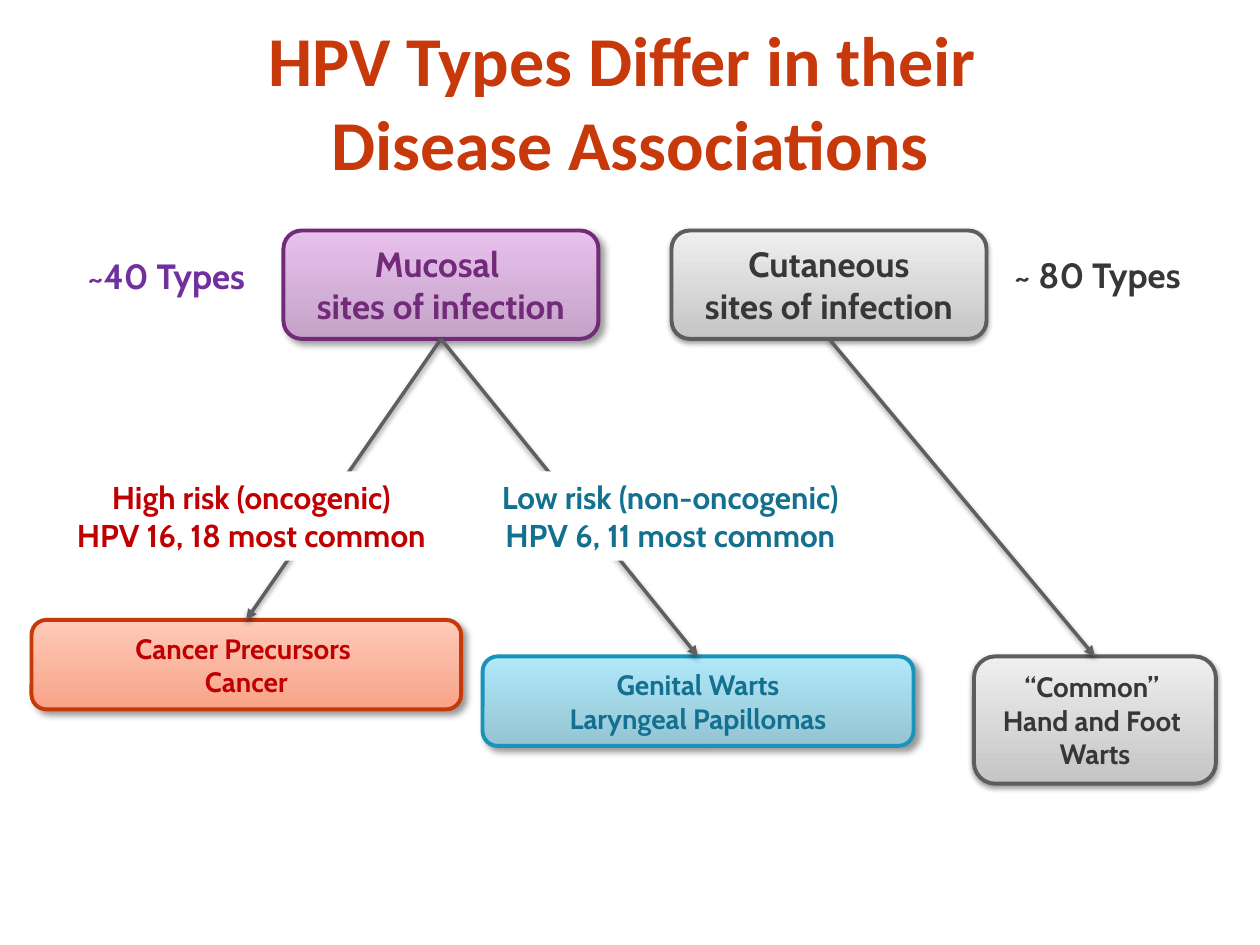
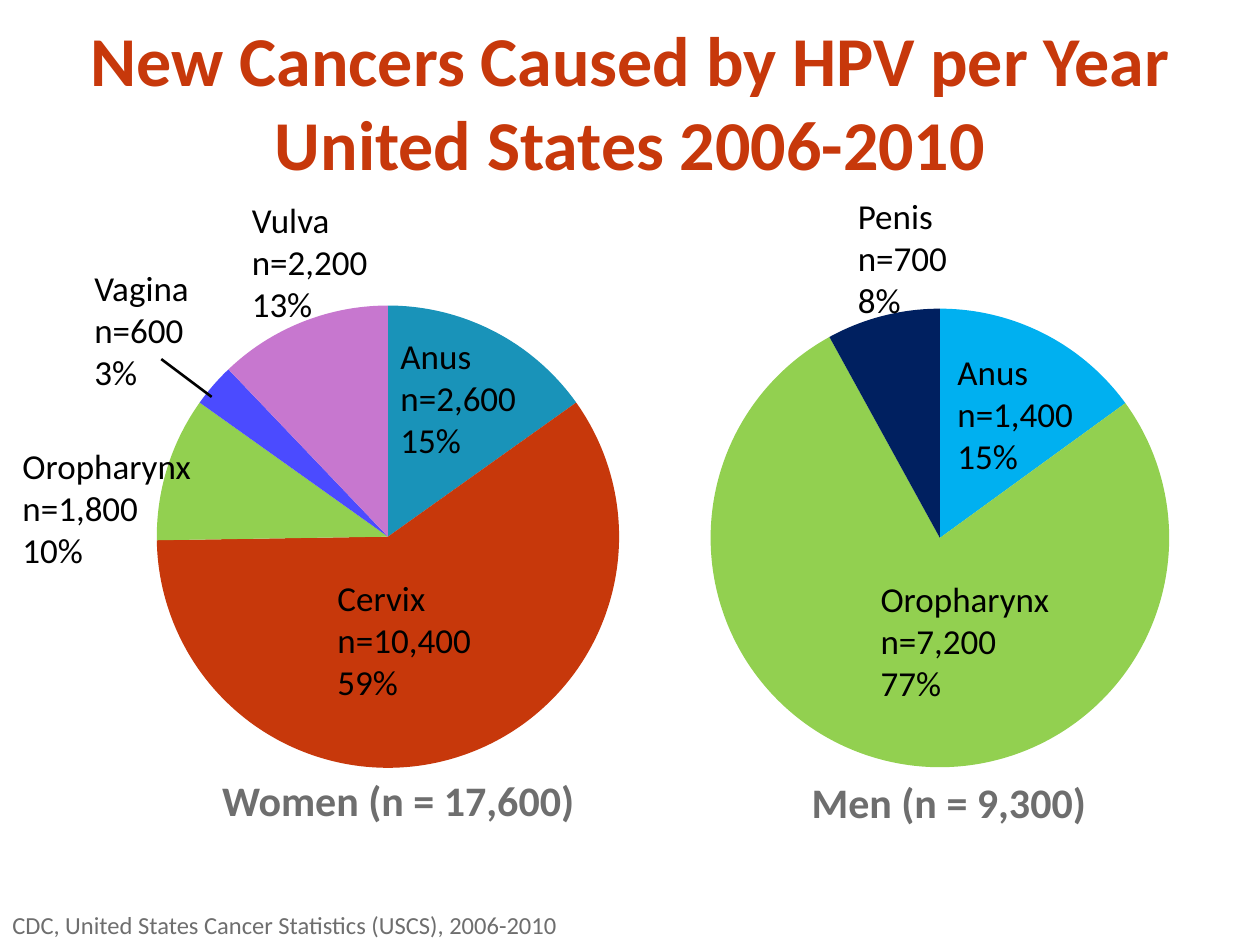
from lxml.etree import SubElement
from pptx import Presentation
from pptx.chart.data import CategoryChartData
from pptx.dml.color import RGBColor
from pptx.enum.chart import XL_CHART_TYPE
from pptx.enum.shapes import MSO_CONNECTOR, MSO_SHAPE
from pptx.enum.text import MSO_ANCHOR, MSO_AUTO_SIZE, PP_ALIGN
from pptx.oxml import parse_xml
from pptx.oxml.ns import nsdecls, qn
from pptx.util import Inches, Pt

COLORS = {
    "title": "C7380B", "white": "FFFFFF", "black": "000000", "caption": "6E6E6E",
    "arrow": "5F5F5F", "plum": "722B79", "violet": "7030A0", "charcoal": "373737",
    "gray": "5D5D5D", "teal": "1993B9", "deep teal": "13718F", "red": "C00000",
    "green": "92D050", "blue": "4B4BFF", "orchid": "C777CF", "sky": "00B0F0",
    "navy": "002060", "plum low": "C4A3C8", "plum high": "E8C1ED",
    "gray low": "C5C5C5", "gray high": "EFEFEF", "teal low": "95C4D3",
    "teal high": "B0E9FA", "orange low": "F8A388", "orange high": "FFCAB9",
}
# Shadow: opacity %, blur pt, distance pt, direction in degrees
SOFT, DIAGONAL = (38, 3.1, 1.6, 90), (40, 4, 3, 45)

# Slide 1: \n starts a paragraph, \v breaks a line
TYPES_TITLE = "HPV Types Differ in their \vDisease Associations"
# key: text, place, size, text colour, border, gradient name, shadow
BOXES = {
    "mucosal": ("Mucosal \nsites of infection", (2.25, 1.83, 2.5, 0.86),
                20, "plum", "plum", "plum", DIAGONAL),
    "cutaneous": ("Cutaneous\nsites of infection", (5.33, 1.83, 2.5, 0.86),
                  20, "charcoal", "gray", "gray", SOFT),
    "cancer": ("Cancer Precursors \nCancer", (0.25, 4.92, 3.41, 0.71),
               16, "red", "title", "orange", DIAGONAL),
    "genital": ("Genital Warts\nLaryngeal Papillomas", (3.83, 5.21, 3.42, 0.71),
                16, "deep teal", "teal", "teal", DIAGONAL),
    "common": ("“Common” \vHand and Foot \nWarts", (7.73, 5.21, 1.92, 1.01),
               16, "charcoal", "gray", "gray", SOFT),
}
LINKS = [("mucosal", "cancer"), ("mucosal", "genital"), ("cutaneous", "common")]
COUNTS = [("~40 Types ", (0.54, 1.97, 1.62, 0.44), "violet"),
          ("~ 80 Types", (7.75, 1.96, 1.92, 0.44), "charcoal")]
RISKS = [("High risk (oncogenic)\vHPV 16, 18 most common", (0.33, 3.74, 3.33, 0.71), "red"),
         ("Low risk (non-oncogenic)\vHPV 6, 11 most common", (3.66, 3.74, 3.32, 0.71), "deep teal")]

# Slide 2: slices are name, cases, label percent, value, colour, label left and top
CANCERS_TITLE = "New Cancers Caused by HPV per Year\vUnited States 2006-2010"
GROUPS = [
    {"caption": "Women (n = 17,600)", "caption_at": (1.62, 6.1, 3.08, 0.5),
     "frame": (1.11, 1.6, 3.95, 5.31), "center": (3.08, 4.26), "diameter": 3.67,
     "slices": [("Anus", "2,600", 15, 15, "teal", 3.08, 2.6),
                ("Cervix", "10,400", 59, 59, "title", 2.58, 4.52),
                ("Oropharynx", "1,800", 10, 10, "green", 0.08, 3.47),
                ("Vagina", "600", 3, 3, "blue", 0.65, 2.06),
                ("Vulva", "2,200", 13, 12, "orchid", 1.9, 1.52)]},
    {"caption": "Men (n = 9,300)", "caption_at": (5.92, 6.1, 3.22, 0.52),
     "frame": (5.5, 1.95, 3.92, 4.65), "center": (7.46, 4.27), "diameter": 3.64,
     "slices": [("Anus", "1,400", 15, 15, "sky", 7.5, 2.73),
                ("Oropharynx", "7,200", 77, 77, "green", 6.89, 4.53),
                ("Penis", "700", 8, 8, "navy", 6.71, 1.49)]},
]
SOURCE = "CDC, United States Cancer Statistics (USCS), 2006-2010"


def color(name):
    return RGBColor.from_string(COLORS[name])


def inches(place):
    return [Inches(value) for value in place]


def write(shape, text, size, ink, font="Cabin", bold=True, align=PP_ALIGN.CENTER):
    frame = shape.text_frame
    frame.text = text
    frame.word_wrap = True
    frame.auto_size = MSO_AUTO_SIZE.NONE
    frame.vertical_anchor = MSO_ANCHOR.MIDDLE
    for paragraph in frame.paragraphs:
        paragraph.alignment = align
        for run in paragraph.runs:
            run.font.name, run.font.size, run.font.bold = font, Pt(size), bold
            run.font.color.rgb = color(ink)


def add_text(slide, place, text, size, ink, **style):
    label = slide.shapes.add_textbox(*inches(place))
    write(label, text, size, ink, **style)
    return label


def add_titled_slide(deck, text, left, width):
    slide = deck.slides.add_slide(deck.slide_layouts[5])
    title = slide.shapes.title
    title.left, title.top, title.width, title.height = inches((left, 0.17, width, 1.25))
    write(title, text, 40, "title", font="Calibri")
    return slide


def set_shadow(properties, shadow=None):
    """Replace the effects, leaving them empty when no shadow is given."""
    for effects in properties.findall(qn("a:effectLst")):
        properties.remove(effects)
    effects = SubElement(properties, qn("a:effectLst"))
    if shadow:
        opacity, blur, distance, angle = shadow
        outer = SubElement(effects, qn("a:outerShdw"), blurRad=str(Pt(blur)),
                           dist=str(Pt(distance)), dir=str(angle * 60000), rotWithShape="0")
        tint = SubElement(outer, qn("a:srgbClr"), val=COLORS["black"])
        SubElement(tint, qn("a:alpha"), val=str(opacity * 1000))


def add_line(slide, start, end, ink, width, shadow=None):
    line = slide.shapes.add_connector(MSO_CONNECTOR.STRAIGHT, *inches(start + end))
    line.line.color.rgb = color(ink)
    line.line.width = Pt(width)
    set_shadow(line._element.spPr, shadow)
    return line


def add_box(slide, text, place, size, ink, border, gradient, shadow):
    box = slide.shapes.add_shape(MSO_SHAPE.ROUNDED_RECTANGLE, *inches(place))
    box.fill.gradient()
    box.fill.gradient_angle = 90
    for stop, shade in zip(box.fill.gradient_stops, ("low", "high")):
        stop.color.rgb = color(f"{gradient} {shade}")
    box.fill.gradient_stops[0].position = 0
    box.fill.gradient_stops[1].position = 1
    box.line.color.rgb = color(border)
    box.line.width = Pt(2.25)
    set_shadow(box._element.spPr, shadow)
    write(box, text, size, ink)
    return box


def add_pie(slide, group):
    data = CategoryChartData()
    data.categories = [str(i + 1) for i in range(len(group["slices"]))]
    data.add_series("Series 1", [item[3] for item in group["slices"]])
    chart = slide.shapes.add_chart(XL_CHART_TYPE.PIE, *inches(group["frame"]), data).chart
    chart.has_title = chart.has_legend = False
    chart.font.name, chart.font.size = "Calibri", Pt(18)
    chart.font.color.rgb = color("black")
    plot = chart.plots[0]
    plot.vary_by_categories = True
    for i, item in enumerate(group["slices"]):
        fill = plot.series[0].points[i].format.fill
        fill.solid()
        fill.fore_color.rgb = color(item[4])

    # Fix the pie's place as fractions of the chart frame
    left, top, width, height = group["frame"]
    (x, y), diameter = group["center"], group["diameter"]
    fractions = {"x": (x - diameter / 2 - left) / width, "y": (y - diameter / 2 - top) / height,
                 "w": diameter / width, "h": diameter / height}
    settings = '<c:layoutTarget val="inner"/><c:xMode val="edge"/><c:yMode val="edge"/>'
    settings += "".join(f'<c:{key} val="{value:.4f}"/>' for key, value in fractions.items())
    area = chart._chartSpace.chart.plotArea
    for layout in area.findall(qn("c:layout")):
        area.remove(layout)
    area.insert(0, parse_xml(f'<c:layout {nsdecls("c")}><c:manualLayout>{settings}'
                             '</c:manualLayout></c:layout>'))


def build_types(deck):
    slide = add_titled_slide(deck, TYPES_TITLE, 0.5, 9)
    boxes = {key: add_box(slide, *details) for key, details in BOXES.items()}

    # Arrows from infection site to disease
    for site, disease in LINKS:
        arrow = add_line(slide, (0, 0), (1, 1), "arrow", 2, SOFT)
        arrow.begin_connect(boxes[site], 2)
        arrow.end_connect(boxes[disease], 0)
        SubElement(arrow.line._get_or_add_ln(), qn("a:tailEnd"), type="triangle")

    # Type counts, and risk labels that cover the arrows
    for text, place, ink in COUNTS:
        add_text(slide, place, text, 20, ink)
    for text, place, ink in RISKS:
        risk = add_text(slide, place, text, 18, ink)
        risk.fill.solid()
        risk.fill.fore_color.rgb = color("white")


def build_cancers(deck):
    slide = add_titled_slide(deck, CANCERS_TITLE, 0, 10)
    add_text(slide, (0, 7.17, 5.92, 0.34), SOURCE, 14, "caption",
             font="Calibri", bold=False, align=PP_ALIGN.LEFT)
    for group in GROUPS:
        add_pie(slide, group)
        add_text(slide, group["caption_at"], group["caption"], 24, "caption", font="Calibri")
        for name, cases, percent, _, _, left, top in group["slices"]:
            add_text(slide, (left, top, 1.62, 1.11), f"{name}\vn={cases}\v{percent}%", 20,
                     "black", font="Calibri", bold=False, align=PP_ALIGN.LEFT)
    # Leader from the Vagina label to its slice
    add_line(slide, (1.28, 2.85), (1.68, 3.15), "black", 1.5)


def main():
    deck = Presentation()
    deck.slide_width, deck.slide_height = Inches(10), Inches(7.5)
    build_types(deck)
    build_cancers(deck)
    deck.save("out.pptx")


if __name__ == "__main__":
    main()
